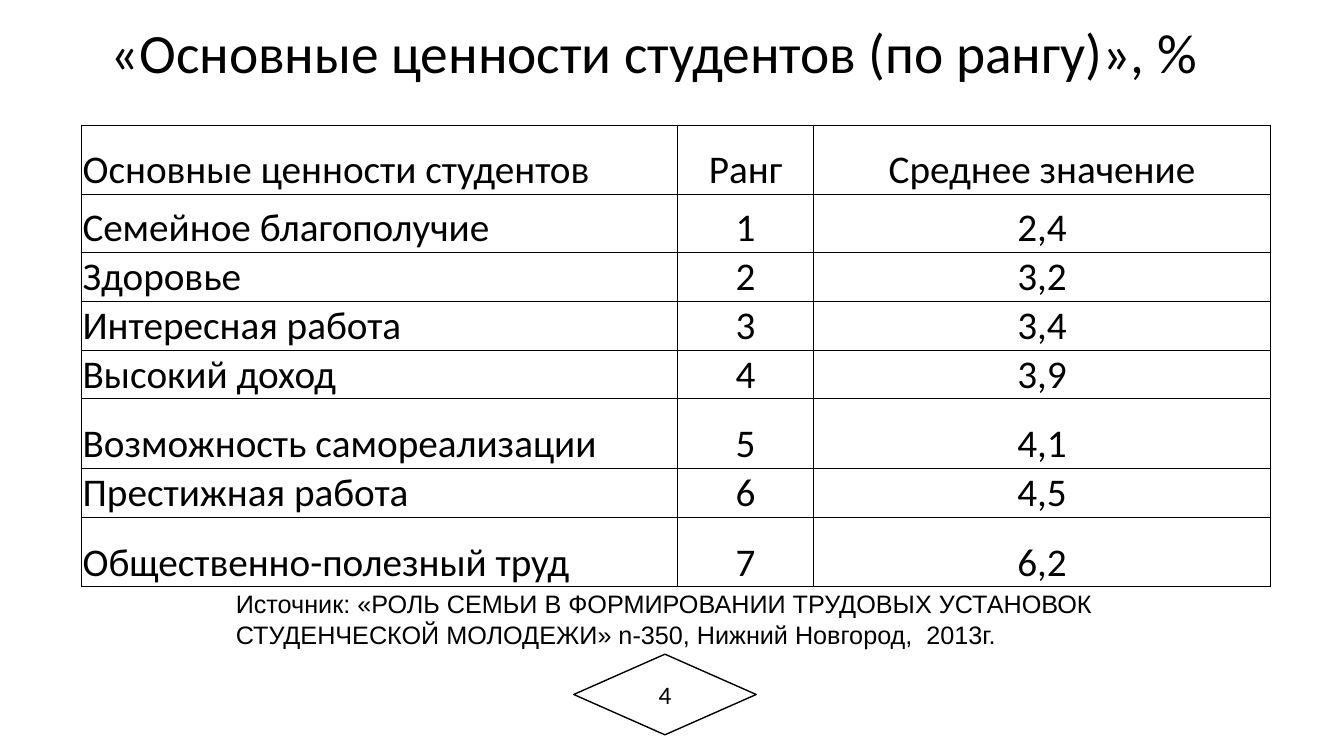
from lxml.etree import SubElement
from pptx import Presentation
from pptx.dml.color import RGBColor
from pptx.enum.shapes import MSO_SHAPE
from pptx.enum.text import MSO_ANCHOR, MSO_AUTO_SIZE, PP_ALIGN
from pptx.oxml.ns import qn
from pptx.util import Inches, Pt

BLACK, WHITE = "000000", "FFFFFF"
COLUMN_WIDTHS = [5.91, 1.35, 4.53]
SHORT_ROW, TALL_ROW = 0.45, 0.69
ROW_HEIGHTS = [TALL_ROW, 0.57] + [SHORT_ROW] * 3 + [TALL_ROW, SHORT_ROW, TALL_ROW]
HEADINGS = ("Основные ценности студентов", "Ранг", "Среднее значение")
VALUES = [
    ("Семейное благополучие", "2,4"),
    ("Здоровье", "3,2"),
    ("Интересная работа", "3,4"),
    ("Высокий доход", "3,9"),
    ("Возможность самореализации", "4,1"),
    ("Престижная работа", "4,5"),
    ("Общественно-полезный труд", "6,2"),
]


def color(hex_value):
    return RGBColor.from_string(hex_value)


def inches(box):
    return [Inches(length) for length in box]


def write(frame, text, size, font="Calibri", align=PP_ALIGN.LEFT):
    frame.text = text
    paragraph = frame.paragraphs[0]
    paragraph.alignment = align
    for run in paragraph.runs:
        run.font.name = font
        run.font.size = Pt(size)
        run.font.color.rgb = color(BLACK)


def outline_cell(cell, width=0.5):
    properties = cell._tc.get_or_add_tcPr()
    for position, side in enumerate(("lnL", "lnR", "lnT", "lnB")):
        border = properties.makeelement(qn(f"a:{side}"), {"w": str(Pt(width))})
        fill = SubElement(border, qn("a:solidFill"))
        SubElement(fill, qn("a:srgbClr"), val=BLACK)
        properties.insert(position, border)


def add_title(slide, box):
    title = slide.shapes.title
    title.left, title.top, title.width, title.height = inches(box)
    frame = title.text_frame
    write(frame, "«Основные ценности студентов (по рангу)», %", 39.6)
    frame.word_wrap = True
    frame.auto_size = MSO_AUTO_SIZE.NONE
    frame.vertical_anchor = MSO_ANCHOR.MIDDLE
    frame.paragraphs[0].line_spacing = 0.9


def add_ranking(slide, left, top):
    records = [HEADINGS] + [
        (name, str(rank), mean) for rank, (name, mean) in enumerate(VALUES, 1)
    ]
    box = inches((left, top, sum(COLUMN_WIDTHS), sum(ROW_HEIGHTS)))
    ranking = slide.shapes.add_table(len(records), len(HEADINGS), *box).table
    for column, width in zip(ranking.columns, COLUMN_WIDTHS):
        column.width = Inches(width)
    for row, height, record in zip(ranking.rows, ROW_HEIGHTS, records):
        row.height = Inches(height)
        for index, (cell, text) in enumerate(zip(row.cells, record)):
            align = PP_ALIGN.CENTER if index else PP_ALIGN.LEFT
            write(cell.text_frame, text, 28, align=align)
            for paragraph in cell.text_frame.paragraphs:
                paragraph.font.bold = False
            cell.margin_left = cell.margin_right = cell.margin_top = Inches(0.01)
            cell.margin_bottom = 0
            cell.vertical_anchor = MSO_ANCHOR.BOTTOM
            cell.fill.solid()
            cell.fill.fore_color.rgb = color(WHITE)
            outline_cell(cell)
            cell.text_frame.paragraphs[0].runs[0].font.bold = False


def add_citation(slide, box):
    frame = slide.shapes.add_textbox(*inches(box)).text_frame
    frame.word_wrap = True
    write(
        frame,
        "Источник: «РОЛЬ СЕМЬИ В ФОРМИРОВАНИИ ТРУДОВЫХ УСТАНОВОК "
        "СТУДЕНЧЕСКОЙ МОЛОДЕЖИ» n-350, Нижний Новгород,  2013г.",
        18,
        font="Arial",
    )


def add_page_number(slide, box):
    diamond = slide.shapes.add_shape(MSO_SHAPE.FLOWCHART_DECISION, *inches(box))
    diamond.shadow.inherit = False
    diamond.fill.solid()
    diamond.fill.fore_color.rgb = color(WHITE)
    diamond.line.color.rgb = color(BLACK)
    diamond.line.width = Pt(1)
    diamond.text_frame.vertical_anchor = MSO_ANCHOR.MIDDLE
    write(diamond.text_frame, "4", 18, align=PP_ALIGN.CENTER)


def main():
    deck = Presentation()
    deck.slide_width, deck.slide_height = inches((13.33, 7.5))
    slide = deck.slides.add_slide(deck.slide_layouts[5])
    add_title(slide, (1, 0.27, 11.42, 0.57))
    add_ranking(slide, 0.81, 1.24)
    add_citation(slide, (2.24, 5.79, 9.81, 0.71))
    add_page_number(slide, (5.69, 6.49, 1.81, 0.8))
    deck.save("out.pptx")


if __name__ == "__main__":
    main()
